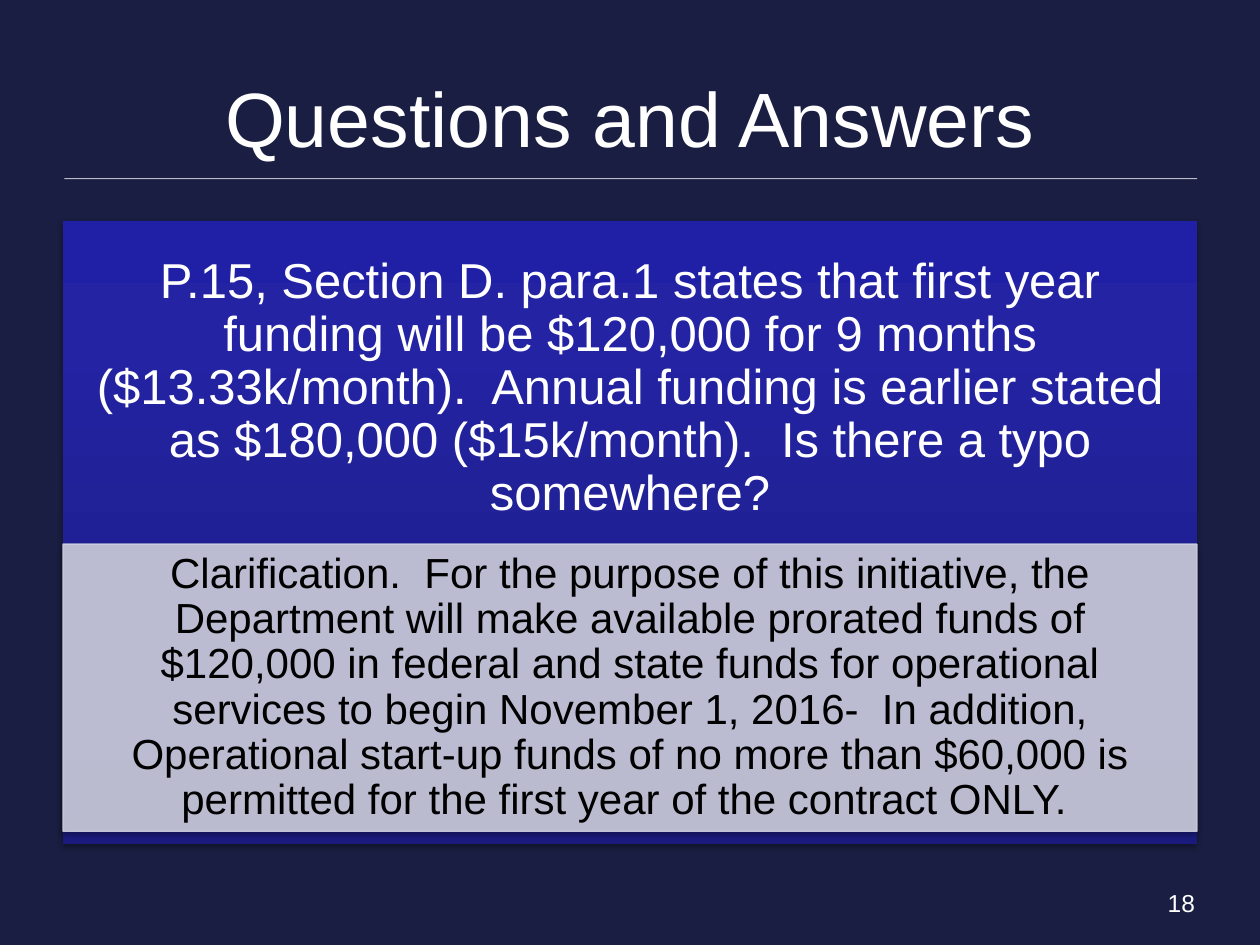
import pptx
import pptx.util
import pptx.dml.color
import pptx.enum.shapes
import pptx.enum.text
import pptx.oxml
from pptx.oxml.ns import qn
from dataclasses import dataclass
from lxml import etree

Cm, Pt = pptx.util.Cm, pptx.util.Pt
Rgb = pptx.dml.color.RGBColor.from_string
Kind = pptx.enum.shapes.MSO_SHAPE
Anchor = pptx.enum.text.MSO_ANCHOR
Align = pptx.enum.text.PP_ALIGN
NS = 'xmlns:a="http://schemas.openxmlformats.org/drawingml/2006/main"'


@dataclass(frozen=True)
class Theme:
    font: str = "Arial"
    back: str = "1A1E42"
    light: str = "FFFFFF"
    dark: str = "000000"
    pale: str = "CECEDE"
    blues: tuple = ((0, "1B1B7E"), (80, "2323A3"), (100, "2020A6"))
    title: int = 44
    ask: int = 28
    reply: int = 24
    page: int = 14


theme = Theme()


def write(shape, text, size, color, pad, align=Align.CENTER,
          anchor=Anchor.MIDDLE, space=None):
    """Fill a shape with one paragraph; pad is (side, top and bottom) in cm."""
    frame = shape.text_frame
    frame.word_wrap = True
    frame.vertical_anchor = anchor
    frame.margin_left = frame.margin_right = Cm(pad[0])
    frame.margin_top = frame.margin_bottom = Cm(pad[1])
    para = frame.paragraphs[0]
    para.alignment = align
    para.line_spacing = space
    run = para.add_run()
    run.text = text
    run.font.name = theme.font
    run.font.size = Pt(size)
    run.font.color.rgb = Rgb(color)


def fade(fill, share):
    """Set the opacity, in percent, of a solid fill element."""
    etree.SubElement(fill[0], qn("a:alpha")).set("val", str(share * 1000))


deck = pptx.Presentation()
deck.slide_width, deck.slide_height = Cm(25.4), Cm(19.05)
slide = deck.slides.add_slide(deck.slide_layouts[6])
slide.background.fill.solid()
slide.background.fill.fore_color.rgb = Rgb(theme.back)
shapes = slide.shapes

left, wide = Cm(1.27), Cm(22.86)
top = Cm(4.45)

# Title and rule
rule = shapes.add_connector(pptx.enum.shapes.MSO_CONNECTOR.STRAIGHT,
                            Cm(1.3), Cm(3.6), Cm(24.13), Cm(3.6))
rule.line.width = Pt(0.5)
rule.line.color.rgb = Rgb(theme.light)
props = rule.line._get_or_add_ln()
fade(props.find(qn("a:solidFill")), 70)
etree.SubElement(rule._element.spPr, qn("a:effectLst"))

title = shapes.add_textbox(left, Cm(0.76), wide, Cm(3.18))
write(title, "Questions and Answers", theme.title, theme.light, (0.25, 0.13))

# Panels: blue behind, pale in front
blue = shapes.add_shape(Kind.RECTANGLE, left, top, wide, Cm(12.57))
blue.line.fill.background()
stops = "".join(f'<a:gs pos="{pos * 1000}"><a:srgbClr val="{hue}"/></a:gs>'
                for pos, hue in theme.blues)
blue._element.spPr.find(qn("a:prstGeom")).addnext(pptx.oxml.parse_xml(
    f'<a:gradFill {NS} rotWithShape="1"><a:gsLst>{stops}</a:gsLst>'
    '<a:lin ang="16200000" scaled="0"/></a:gradFill>'))

ask = shapes.add_textbox(left, top, wide, Cm(6.78))
write(ask, "P.15, Section D. para.1 states that first year funding will be "
      "$120,000 for 9 months ($13.33k/month).  Annual funding is earlier "
      "stated as $180,000 ($15k/month).  Is there a typo somewhere?",
      theme.ask, theme.light, (0.56, 0.56), space=0.9)

reply = shapes.add_shape(Kind.RECTANGLE, left, Cm(10.97), wide, Cm(5.79))
reply.fill.solid()
reply.fill.fore_color.rgb = Rgb(theme.pale)
reply.line.width = Pt(0.75)
reply.line.color.rgb = Rgb(theme.pale)
for fill in list(reply._element.spPr.iter(qn("a:solidFill"))):
    fade(fill, 90)
write(reply, "Clarification.  For the purpose of this initiative, the "
      "Department will make available prorated funds of $120,000 in federal "
      "and state funds for operational services to begin November 1, 2016-  "
      "In addition, Operational start-up funds of no more than $60,000 is "
      "permitted for the first year of the contract ONLY. ",
      theme.reply, theme.dark, (0.48, 0.08), space=0.9)

for panel in (blue, reply):
    panel._element.spPr.append(pptx.oxml.parse_xml(
        f'<a:effectLst {NS}><a:outerShdw blurRad="{Pt(3.1)}" '
        f'dist="{Pt(1.8)}" dir="5400000" rotWithShape="0">'
        f'<a:srgbClr val="{theme.dark}"><a:alpha val="35000"/></a:srgbClr>'
        '</a:outerShdw></a:effectLst>'))

# Page number
page = shapes.add_textbox(Cm(18.42), Cm(17.78), Cm(5.92), Cm(0.69))
write(page, "18", theme.page, theme.light, (0.25, 0.13),
      Align.RIGHT, Anchor.TOP)

deck.save("out.pptx")
